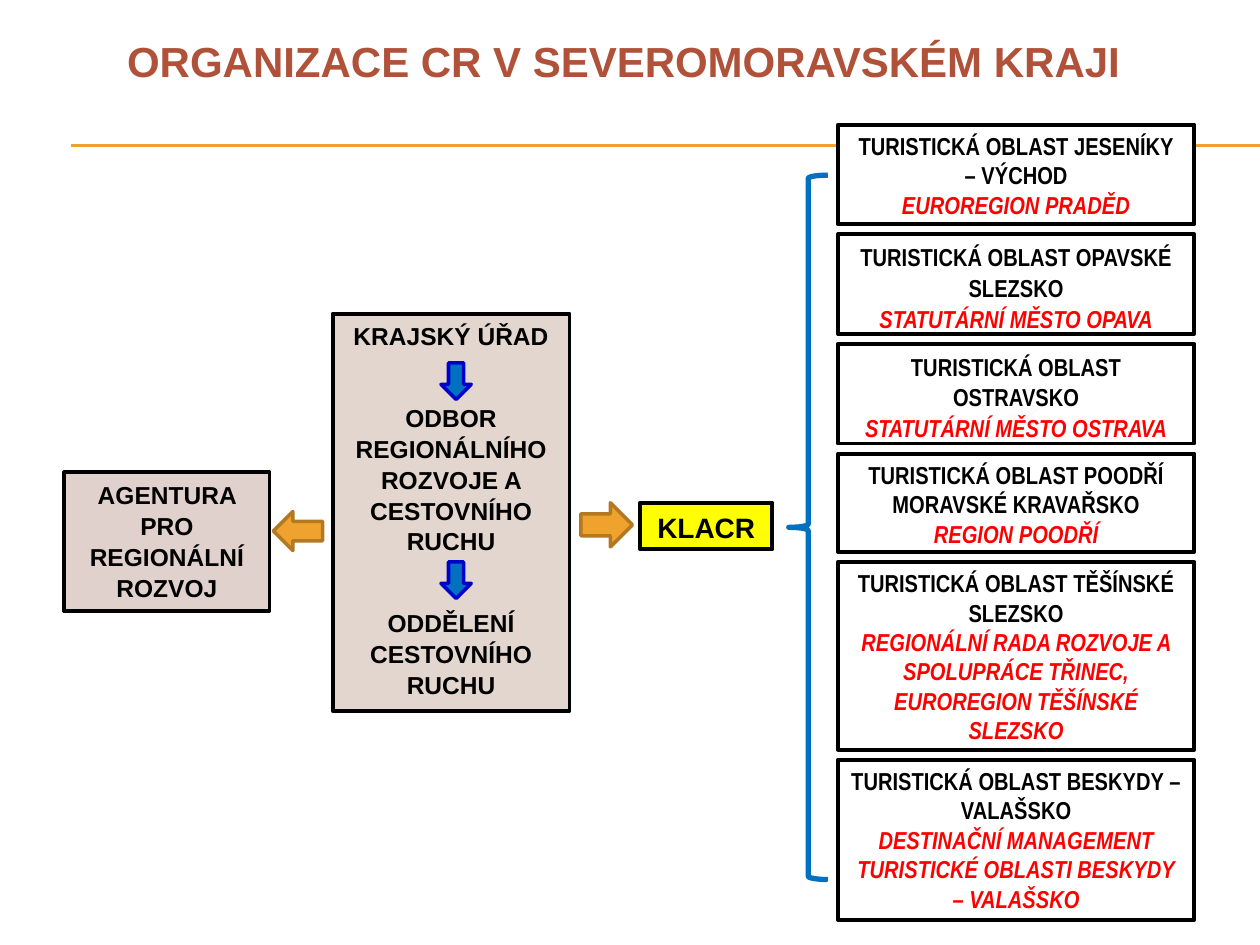
"""Builds a one-slide diagram of how tourism is organised in a Czech region."""
from lxml import etree
from pptx import Presentation
from pptx import util as u
from pptx.dml.color import RGBColor
from pptx.enum import shapes, text
from pptx.oxml.ns import qn

PX = 9144
BLACK = RGBColor(0x00, 0x00, 0x00)
WHITE = RGBColor(0xFF, 0xFF, 0xFF)
RED = RGBColor(0xFF, 0x00, 0x00)
YELLOW = RGBColor(0xFF, 0xFF, 0x00)
RUST = RGBColor(0xB0, 0x52, 0x39)
ORANGE = RGBColor(0xF0, 0xA2, 0x2E)
BROWN = RGBColor(0xB2, 0x78, 0x22)
BLUE = RGBColor(0x00, 0x70, 0xC0)
NAVY = RGBColor(0x00, 0x00, 0xCC)
ROSE = RGBColor(0xE1, 0xD1, 0xCC)
SAND = RGBColor(0xE2, 0xD6, 0xCF)

SHAPE = shapes.MSO_SHAPE
ALIGN = text.PP_ALIGN
ANCHOR = text.MSO_ANCHOR

REGION_LEFT, REGION_TOP, REGION_WIDTH, REGION_GAP = 665, 99, 283, 8
REGIONS = [
    (79, 1.0, ["TURISTICKÁ OBLAST JESENÍKY – VÝCHOD"], ["EUROREGION PRADĚD"]),
    (79, 1.05, ["TURISTICKÁ OBLAST OPAVSKÉ SLEZSKO"], ["STATUTÁRNÍ MĚSTO OPAVA"]),
    (79, 1.05, ["TURISTICKÁ OBLAST OSTRAVSKO"], ["STATUTÁRNÍ MĚSTO OSTRAVA"]),
    (78, 1.0, ["TURISTICKÁ OBLAST POODŘÍ", "MORAVSKÉ KRAVAŘSKO"], ["REGION POODŘÍ"]),
    (149, 1.0, ["TURISTICKÁ OBLAST TĚŠÍNSKÉ SLEZSKO"],
     ["REGIONÁLNÍ RADA ROZVOJE A SPOLUPRÁCE TŘINEC,", "EUROREGION TĚŠÍNSKÉ SLEZSKO"]),
    (127, 1.0, ["TURISTICKÁ OBLAST BESKYDY – VALAŠSKO"],
     ["DESTINAČNÍ MANAGEMENT TURISTICKÉ OBLASTI BESKYDY – VALAŠSKO"]),
]


def assign(target, values):
    """Sets each named attribute on the target."""
    for name, value in values.items():
        setattr(target, name, value)


class Diagram:
    """Holds the text style and the current slide."""

    font = {"name": "Arial", "size": u.Pt(14), "bold": True}
    layout = {"alignment": ALIGN.CENTER, "line_spacing": 1.05}

    def __init__(self, page):
        """Starts drawing on a page."""
        self.page = page

    def add_lines(self, frame, lines, color=BLACK, font=None, layout=None):
        """Adds one paragraph per line to a text frame."""
        frame.word_wrap = True
        for line in lines:
            first = frame.paragraphs[0]
            para = frame.add_paragraph() if first.runs else first
            assign(para, {**self.layout, **(layout or {})})
            span = para.add_run()
            span.text = line
            assign(span.font, {**self.font, **(font or {})})
            span.font.color.rgb = color

    def title(self, place, line):
        """Adds the heading."""
        box = self.page.shapes.add_textbox(*(n * PX for n in place))
        box.text_frame.vertical_anchor = ANCHOR.MIDDLE
        self.add_lines(box.text_frame, [line], RUST, {"size": u.Pt(24)},
                       {"alignment": ALIGN.LEFT, "line_spacing": 1.0})

    def rule(self, left, right, top):
        """Adds a thin horizontal line."""
        line = self.page.shapes.add_connector(
            shapes.MSO_CONNECTOR.STRAIGHT, left * PX, top * PX, right * PX, top * PX)
        line.line.color.rgb = ORANGE
        line.line.width = u.Pt(0.75)
        etree.SubElement(line._element.spPr, qn("a:effectLst"))

    def shape(self, kind, place, fill, line, width):
        """Adds a preset shape, unfilled when fill is None."""
        shape = self.page.shapes.add_shape(kind, *(n * PX for n in place))
        shape.shadow.inherit = False
        if fill is None:
            shape.fill.background()
        else:
            shape.fill.solid()
            shape.fill.fore_color.rgb = fill
        shape.line.color.rgb = line
        shape.line.width = u.Pt(width)
        return shape

    def box(self, place, fill, lines=(), font=None, layout=None):
        """Adds a black-framed box and returns its text frame."""
        frame = self.shape(SHAPE.RECTANGLE, place, fill, BLACK, 2.25).text_frame
        frame.vertical_anchor = ANCHOR.TOP
        self.add_lines(frame, lines, BLACK, font, layout)
        return frame

    def region(self, place, spacing, names, managers):
        """Adds a tourist area with its managing body in red."""
        frame = self.box(place, WHITE)
        font, layout = {"name": "Arial Narrow"}, {"line_spacing": spacing}
        self.add_lines(frame, names, BLACK, font, layout)
        self.add_lines(frame, managers, RED, {**font, "italic": True}, layout)


def main():
    """Draws the slide and saves the deck."""
    deck = Presentation()
    deck.slide_width, deck.slide_height = 1000 * PX, 750 * PX
    diagram = Diagram(deck.slides.add_slide(deck.slide_layouts[6]))

    for top in (115, 116):
        diagram.rule(56, 1000, top)
    diagram.title((91, 13, 861, 71), "ORGANIZACE CR V SEVEROMORAVSKÉM KRAJI")

    top = REGION_TOP
    for height, spacing, names, managers in REGIONS:
        diagram.region((REGION_LEFT, top, REGION_WIDTH, height), spacing, names, managers)
        top += height + REGION_GAP
    diagram.shape(SHAPE.LEFT_BRACE, (626, 139, 31, 559), None, BLUE, 3)

    diagram.box((51, 375, 163, 110), ROSE, ["AGENTURA PRO REGIONÁLNÍ ROZVOJ"])
    diagram.box((508, 399, 105, 37), YELLOW, ["KLACR"], {"size": u.Pt(16)},
                {"space_before": u.Pt(6)})
    diagram.box((264, 249, 188, 315), SAND, [
        "KRAJSKÝ ÚŘAD",
        "ODBOR REGIONÁLNÍHO ROZVOJE A CESTOVNÍHO RUCHU",
        "ODDĚLENÍ CESTOVNÍHO RUCHU",
    ], layout={"space_after": u.Pt(29)})

    for top in (288, 446):
        diagram.shape(SHAPE.DOWN_ARROW, (350, top, 24, 29), BLUE, NAVY, 2)
    diagram.shape(SHAPE.RIGHT_ARROW, (461, 399, 41, 35), ORANGE, BROWN, 2)
    diagram.shape(SHAPE.LEFT_ARROW, (217, 406, 39, 31), ORANGE, BROWN, 2)

    deck.save("out.pptx")


if __name__ == "__main__":
    main()
